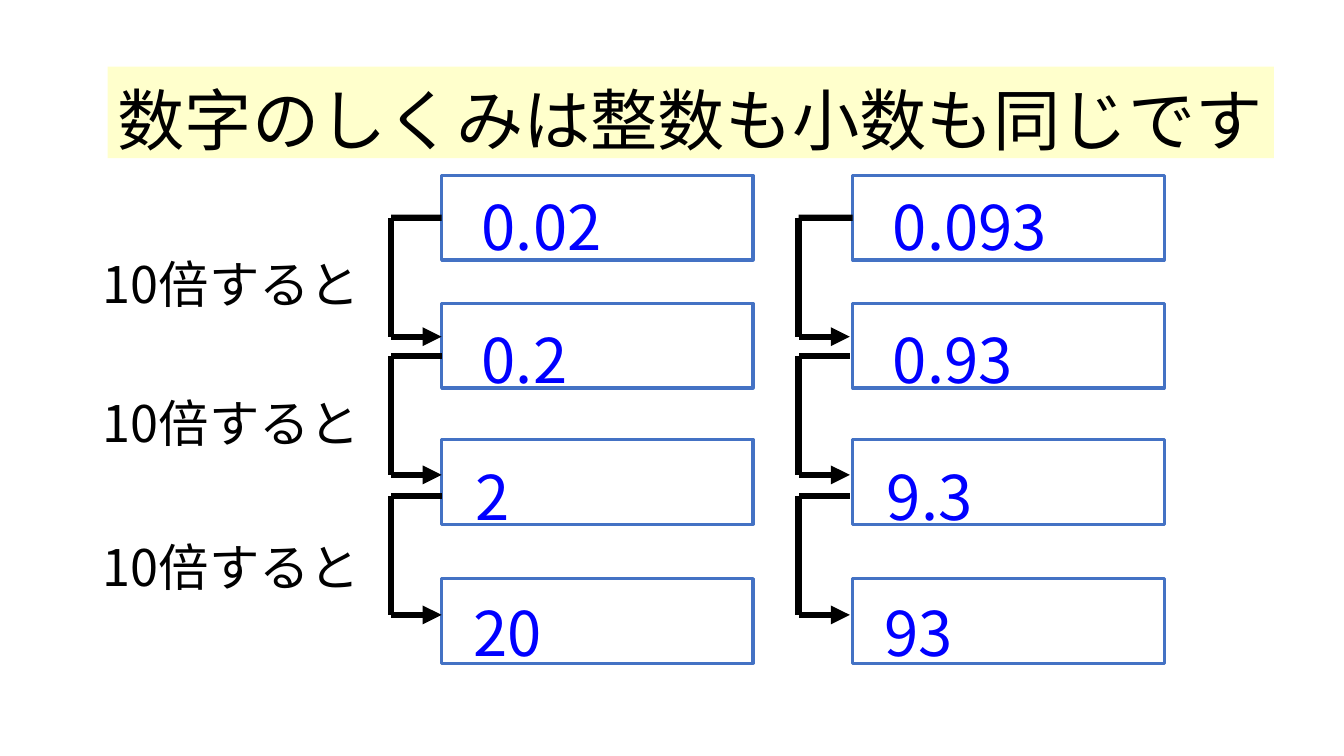
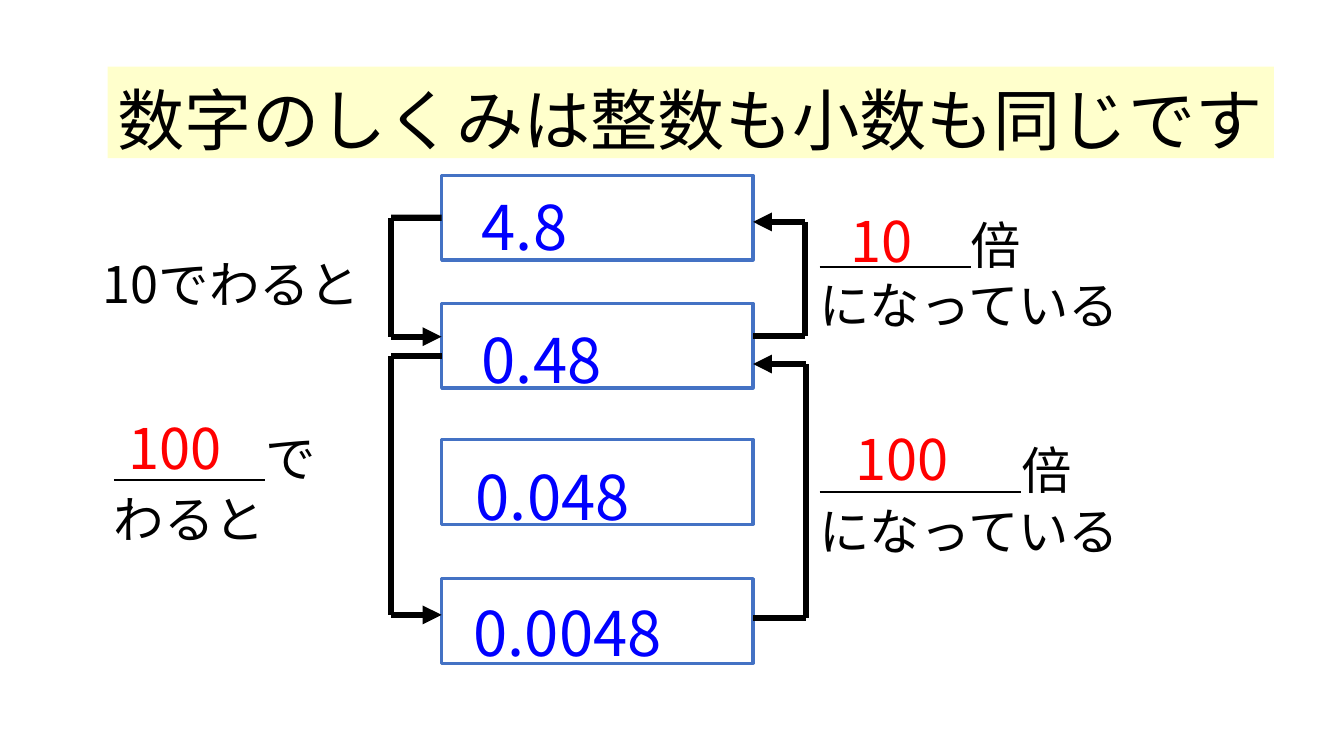
from lxml import etree
from pptx import Presentation
from pptx.dml.color import RGBColor
from pptx.enum import shapes, text
from pptx.oxml.ns import qn
from pptx.util import Pt

FONT = "Noto Sans CJK JP"
BLACK = RGBColor(0, 0, 0)
BLUE = RGBColor(0, 0, 255)
RED = RGBColor(255, 0, 0)
EDGE = RGBColor(0x44, 0x72, 0xC4)
CREAM = RGBColor(255, 255, 0xCC)

TITLE = "数字のしくみは整数も小数も同じです"
BOX_W, BOX_H = 222.5, 60.5
TOPS = (125.3, 216.7, 313.9, 413.3)
SHIFTS = ((21.6, 1.4), (21.6, 5), (17.3, 5.8), (15.8, 3.6))
LEFT, RIGHT = 315.4, 609.1
SIDE = 66.3
STEPS = ((155.5, 240.5), (254.5, 339.2), (354.2, 439.2))


def write(slide, x, y, w, lines, size, color=BLACK, indent=0):
    """Put lines of text at x, y; the first line starts at the indent."""
    box = slide.shapes.add_textbox(Pt(x), Pt(y), Pt(w),
                                   Pt(1.3 * size * len(lines) + 8))
    frame = box.text_frame
    frame.word_wrap = True
    frame.margin_top = Pt(3.6 + size / 10)
    frame.text = "\n".join(lines)
    for par in frame.paragraphs:
        par.line_spacing = Pt(1.2 * size)
        par.font.size = Pt(size)
        par.font.name = FONT
        par.font.color.rgb = color
        for run in par.runs:
            run.font.name = FONT
            east = etree.SubElement(run._r.get_or_add_rPr(), qn("a:ea"))
            east.set("typeface", FONT)
    if indent:
        props = frame.paragraphs[0]._p.get_or_add_pPr()
        props.set("marL", "0")
        props.set("indent", str(Pt(indent)))


def rect(slide, x, y, w, h):
    shape = slide.shapes.add_shape(shapes.MSO_SHAPE.RECTANGLE,
                                   Pt(x), Pt(y), Pt(w), Pt(h))
    shape.shadow.inherit = False
    return shape


def rule(slide, start, end, width=4.5, arrow=False):
    line = slide.shapes.add_connector(shapes.MSO_CONNECTOR.STRAIGHT,
                                      *map(Pt, start + end))
    line.line.color.rgb = BLACK
    line.line.width = Pt(width)
    if arrow:
        head = etree.SubElement(line.line._get_or_add_ln(), qn("a:tailEnd"))
        head.set("type", "triangle")
    etree.SubElement(line._element.spPr, qn("a:effectLst"))
    return line


def bracket(slide, tip, bend, start, end, box=None):
    """Lead from the height start round the bend to an arrow at end.

    A box given is joined at the middle of its left side.
    """
    first = rule(slide, (tip, start), (bend, start))
    if box is not None:
        first.begin_connect(box, 1)
    rule(slide, (bend, start), (bend, end))
    rule(slide, (bend, end), (tip, end), arrow=True)


def column(slide, x, values):
    """Stack the number boxes from the left edge x; return them."""
    boxes = []
    for top, (dx, dy), value in zip(TOPS, SHIFTS, values):
        box = rect(slide, x, top, BOX_W, BOX_H)
        box.fill.background()
        box.line.color.rgb = EDGE
        box.line.width = Pt(2.25)
        write(slide, x + dx, top + dy, BOX_W - dx, [value], 44, BLUE)
        boxes.append(box)
    return boxes


def blank(slide, x, y, gap, lines, answer, dx, dy):
    """Write lines after a ruled gap that holds a red answer."""
    write(slide, x, y, 240, lines, 36, indent=gap)
    rule(slide, (x + 7.2, y + 45), (x + 7.2 + gap, y + 45), 1.5)
    write(slide, x + dx, y + dy, 110, [answer], 40, RED)


def page(deck):
    """Add a slide with the title band."""
    slide = deck.slides.add_slide(deck.slide_layouts[6])
    band = rect(slide, 77, 47.5, 833, 65.5)
    band.fill.solid()
    band.fill.fore_color.rgb = CREAM
    band.line.fill.background()
    write(slide, 77, 47.5, 840, [TITLE], 48)
    return slide


def times(deck):
    slide = page(deck)
    for y in (173.5, 272.9, 375.8):
        write(slide, SIDE, y, 213, ["10倍すると"], 36)
    for x, tip, bend, values in (
            (LEFT, LEFT, 279.4, ("0.02", "0.2", "2", "20")),
            (RIGHT, 607, 570.5, ("0.093", "0.93", "9.3", "93"))):
        boxes = column(slide, x, values)
        for step, box in zip(STEPS, (boxes[0], None, None)):
            bracket(slide, tip, bend, *step, box)


def divide(deck):
    slide = page(deck)
    boxes = column(slide, LEFT, ("4.8", "0.48", "0.048", "0.0048"))
    bracket(slide, LEFT, 279.4, *STEPS[0], boxes[0])
    bracket(slide, LEFT, 279.4, STEPS[1][0], STEPS[2][1])
    edge = LEFT + BOX_W
    bracket(slide, edge, 575, 240, 158.5)
    bracket(slide, edge, 575.5, 441.4, 260)
    write(slide, SIDE, 173.5, 213, ["10でわると"], 36)
    blank(slide, 74.2, 298, 108, ["で", "わると"], "100", 10.8, -10)
    more = ["倍", "になっている"]
    blank(slide, 578.2, 145.5, 108, more, "10", 22.3, -5.8)
    blank(slide, 578.2, 306.7, 144, more, "100", 25.9, -10.8)


def main():
    deck = Presentation()
    deck.slide_width, deck.slide_height = Pt(960), Pt(540)
    times(deck)
    divide(deck)
    deck.save("out.pptx")


if __name__ == "__main__":
    main()
